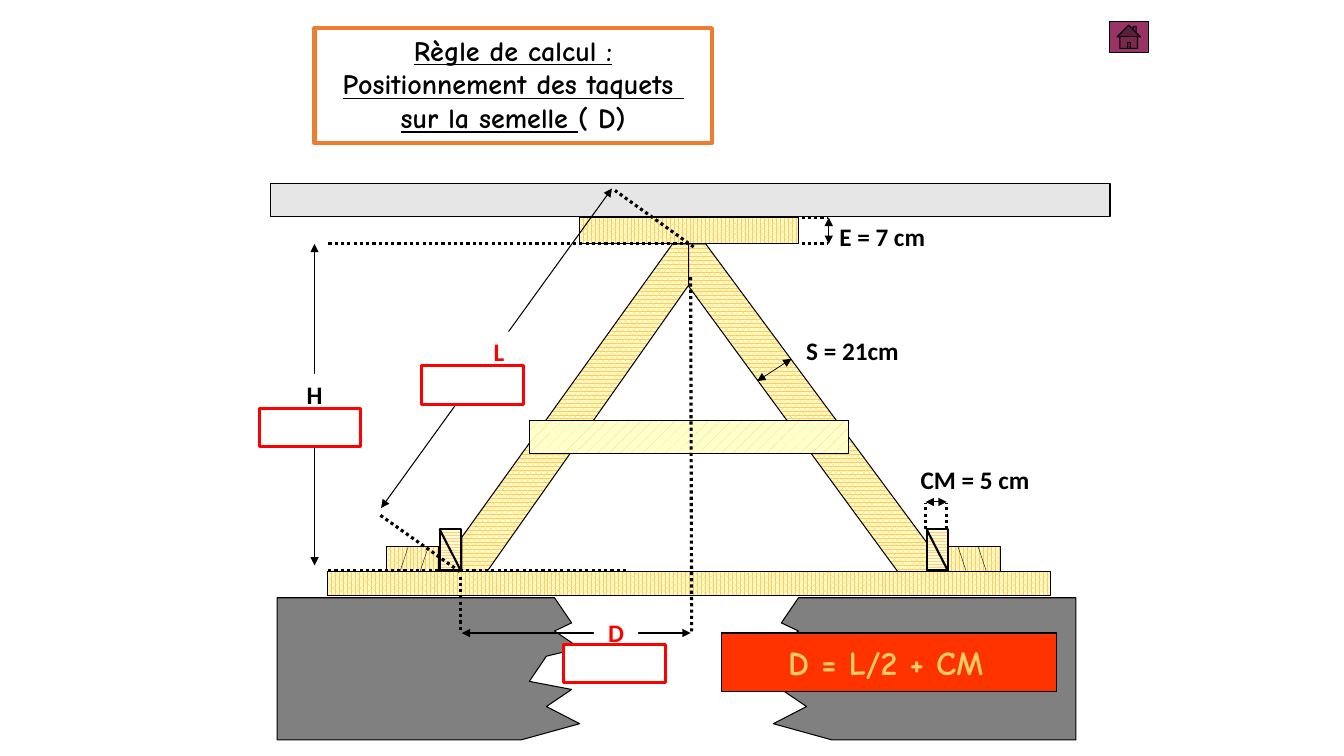
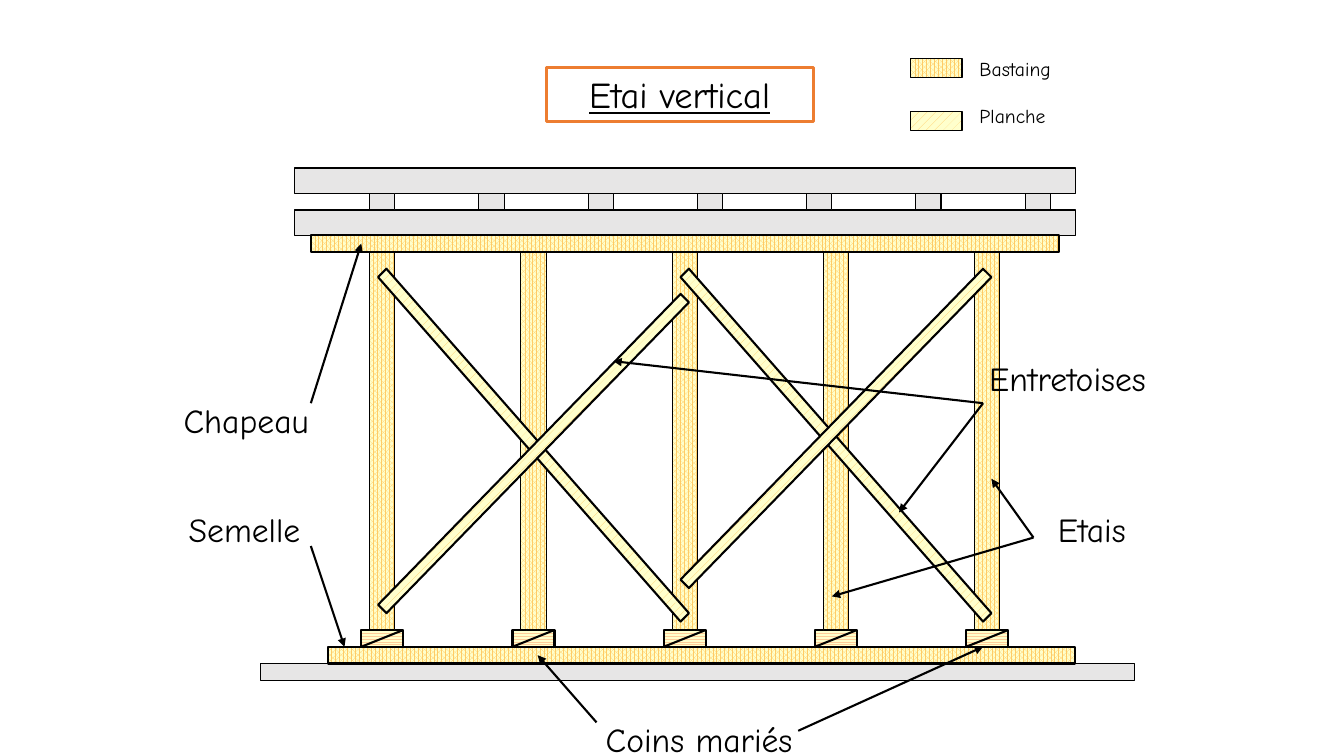
"""Build two slides on timber shoring: the cleat rule and the vertical shore."""
import pptx
import pptx.util
import pptx.dml.color
import pptx.enum.dml
import pptx.enum.shapes
import pptx.enum.text
import pptx.oxml.ns
from lxml import etree

RGB = pptx.dml.color.RGBColor
PATTERN = pptx.enum.dml.MSO_PATTERN
SHAPE = pptx.enum.shapes.MSO_SHAPE
ALIGN = pptx.enum.text.PP_ALIGN
Pt = pptx.util.Pt

BLACK = RGB(0x00, 0x00, 0x00)
WHITE = RGB(0xFF, 0xFF, 0xFF)
RED = RGB(0xFF, 0x00, 0x00)
ORANGE = RGB(0xED, 0x7D, 0x31)
VERMILION = RGB(0xFF, 0x33, 0x00)
PLUM = RGB(0x99, 0x33, 0x66)
CONCRETE = RGB(0xE7, 0xE6, 0xE6)
ROCK = RGB(0x80, 0x80, 0x80)
GRAIN = RGB(0xFF, 0xCC, 0x66)
PEACH = RGB(0xFF, 0xCC, 0x99)
CREAM = RGB(0xFF, 0xFF, 0xCC)

BEAM = (PATTERN.PERCENT_75, GRAIN, CREAM)
PLANK = (PATTERN.PERCENT_20, GRAIN, CREAM)
TIE = (PATTERN.PERCENT_10, GRAIN, CREAM)
WEDGE = (PATTERN.ZIG_ZAG, PEACH, CREAM)

DIMENSION = {"name": "Calibri", "size": Pt(18), "bold": True}
FORMULA = {"name": "Comic Neue", "size": Pt(24), "bold": True}
CAPTION = {"name": "Comic Neue", "size": Pt(24)}
LEGEND = {"name": "Comic Neue", "size": Pt(14)}
RULE_TITLE = {"name": "Comic Neue", "size": Pt(20), "bold": True, "underline": True}
SHORE_TITLE = {"name": "Comic Neue", "size": Pt(26), "underline": True}
PLAIN = {"underline": False}

RULE = {
    "title": [[("Règle de calcul :", {})],
              [("Positionnement des taquets ", {})],
              [("sur la semelle ", {}), ("( D)", PLAIN)]],
    "blocks": [((9.4, 5.42, 0.52, 0.25), (9.61, 9.81), -0.11),
               ((3.83, 5.42, 0.52, 0.25), (3.94, 4.14), 0.11)],
    "struts": [[(4.58, 5.33), (6.67, 2.42), (6.83, 2.42), (6.83, 2.83), (4.83, 5.67), (4.58, 5.67)],
               [(9.19, 5.38), (7, 2.42), (6.83, 2.42), (6.83, 2.84), (8.94, 5.72), (9.19, 5.72)]],
    "bank": [(2.75, 5.93), (5.5, 5.93), (5.67, 6.18), (5.5, 6.26), (5.75, 6.43), (5.42, 6.51),
             (5.25, 6.76), (5.67, 6.84), (5.42, 7.01), (5.75, 7.18), (5.17, 7.34), (2.75, 7.34)],
    "bank_mirror": 13.42,
    "cleats": [9.19, 4.36],
    "spans": [((6.85, 6.28), (4.58, 6.28), 0.75), ((3.12, 5.61), (3.12, 2.42), 0.75),
              ((3.78, 5.04), (6.07, 1.87), 0.75), ((9.18, 4.98), (9.39, 4.98), 0.75),
              ((8.22, 2.16), (8.22, 2.42), 0.75), ((7.85, 3.56), (7.51, 3.78), 0.5)],
    "guides": [((4.57, 5.72), (4.57, 6.25)), ((6.85, 2.75), (6.86, 6.28)),
               ((6.21, 5.66), (3.23, 5.66)), ((6.88, 2.45), (6.1, 1.89)),
               ((4.56, 5.67), (3.77, 5.11)), ((9.39, 5.25), (9.39, 4.99)),
               ((9.18, 5.25), (9.18, 4.99)), ((7.95, 2.42), (8.21, 2.42)),
               ((7.95, 2.16), (8.21, 2.16))],
    "unknowns": [("D", (5.89, 6.08, 0.44, 0.4), RED, (5.59, 6.39)),
                 ("H", (2.75, 3.71, 0.74, 0.4), BLACK, (2.57, 4.05)),
                 ("L", (4.66, 3.29, 0.58, 0.4), RED, (4.18, 3.63))],
    "answer_size": (1.01, 0.38),
    "known": [("CM = 5 cm", (8.93, 4.56, 1.48, 0.4)), ("E = 7 cm", (8.11, 2.15, 1.28, 0.4)),
              ("S = 21cm", (7.89, 3.28, 1.13, 0.4))],
}

SHORE = {
    "title": [[("Etai vertical", {})]],
    "slabs": [(35, 25, 93, 3), (35, 20, 93, 3), (31, 79, 104, 2)],
    "joists": [(44 + 13 * n, 23, 3, 2) for n in range(7)],
    "beams": [(37, 28, 89, 2), (39, 77, 89, 2)],
    "wedges": [(43 + 18 * n, 75, 5, 2) for n in range(5)],
    "posts": [(44 + 18 * n, 30, 3, 45) for n in range(5)],
    "falling": [(46, 32), (82, 73), (81, 74), (45, 33)],
    "rising": [(81, 35), (45, 72), (46, 73), (82, 36)],
    "braces": [("falling", 36, 0), ("falling", 0, 0), ("rising", 0, 0), ("rising", 36, -3)],
    "captions": [
        ("Chapeau", (20.5, 47, 17.6, 6), [((37, 48), (43, 29))]),
        ("Semelle", (20.6, 60, 17, 6), [((37, 65), (41, 77))]),
        ("Coins mariés", (70.4, 85, 25.6, 6), [((95, 87), (117, 77)), ((71, 86), (64, 78))]),
        ("Etais", (124, 60, 11.9, 6), [((123, 64), (99, 71)), ((123, 64), (118, 57))]),
        ("Entretoises", (115, 42, 24.1, 6), [((117, 48), (73, 43)), ((117, 48), (107, 61))]),
    ],
    "legend": [("Bastaing", BEAM, 7), ("Planche", PLANK, 13.3)],
}


class Board:
    """A slide measured in cells, with a fixed number of cells to the inch."""

    def __init__(self, deck, cells_per_inch):
        self.shapes = deck.slides.add_slide(deck.slide_layouts[6]).shapes
        self.cells = cells_per_inch

    def lengths(self, values):
        return [pptx.util.Inches(value / self.cells) for value in values]

    def dress(self, part, fill, line, width):
        part.shadow.inherit = False
        if fill is None:
            part.fill.background()
        elif isinstance(fill, RGB):
            part.fill.solid()
            part.fill.fore_color.rgb = fill
        else:
            part.fill.patterned()
            part.fill.pattern, part.fill.fore_color.rgb, part.fill.back_color.rgb = fill
        if line is None:
            part.line.fill.background()
        else:
            part.line.color.rgb = line
            part.line.width = Pt(width)
        return part

    def block(self, box, fill, line=BLACK, width=0.75, kind=SHAPE.RECTANGLE):
        part = self.shapes.add_shape(kind, *self.lengths(box))
        return self.dress(part, fill, line, width)

    def outline(self, points, fill, width=0.75):
        corners = [self.lengths(point) for point in points]
        builder = self.shapes.build_freeform(*corners[0], scale=1.0)
        builder.add_line_segments(corners[1:], close=True)
        return self.dress(builder.convert_to_shape(), fill, BLACK, width)

    def line(self, start, end, width=0.75, dotted=False, heads=()):
        straight = pptx.enum.shapes.MSO_CONNECTOR.STRAIGHT
        part = self.shapes.add_connector(straight, *self.lengths(start + end))
        part.line.color.rgb = BLACK
        part.line.width = Pt(width)
        if dotted:
            part.line.dash_style = pptx.enum.dml.MSO_LINE.ROUND_DOT
        qn = pptx.oxml.ns.qn
        outline = part.line._get_or_add_ln()
        for head in heads:
            etree.SubElement(outline, qn(f"a:{head}")).set("type", "triangle")
        etree.SubElement(part._element.spPr, qn("a:effectLst"))
        return part

    def inscribe(self, part, paragraphs, look, color=BLACK, wrap=True, align=ALIGN.CENTER, gap=0):
        frame = part.text_frame
        settings = {"word_wrap": wrap, "vertical_anchor": pptx.enum.text.MSO_ANCHOR.TOP,
                    "auto_size": pptx.enum.text.MSO_AUTO_SIZE.SHAPE_TO_FIT_TEXT}
        for name, value in settings.items():
            setattr(frame, name, value)
        for index, pieces in enumerate(paragraphs):
            paragraph = frame.add_paragraph() if index else frame.paragraphs[0]
            paragraph.alignment = align
            if index and gap:
                paragraph.space_before = Pt(gap)
            for words, changes in pieces:
                run = paragraph.add_run()
                run.text = words
                run.font.color.rgb = color
                for name, value in {**look, **changes}.items():
                    setattr(run.font, name, value)

    def label(self, box, lines, look, **options):
        part = self.shapes.add_textbox(*self.lengths(box))
        self.inscribe(part, [[(words, {})] for words in lines], look, **options)

    def title(self, box, paragraphs, look, width):
        self.inscribe(self.block(box, None, ORANGE, width), paragraphs, look)

    def wedge(self, box, falling=False):
        left, top, wide, high = box
        self.block(box, WEDGE, width=1.5)
        near, far = (top, top + high) if falling else (top + high, top)
        self.line((left + wide, far), (left, near), 1.5)


def draw_rule(deck):
    """Draw the slide on where the cleats go."""
    board = Board(deck, 1)
    both = ("headEnd", "tailEnd")
    for box, nails, lean in RULE["blocks"]:
        board.block(box, BEAM)
        for foot in nails:
            board.line((foot, 5.75), (foot + lean, 5.42), 0.25)
    board.block((2.68, 1.82, 8.33, 0.33), CONCRETE)
    for strut in RULE["struts"]:
        board.outline(strut, BEAM)
    board.block((5.25, 4.17, 3.17, 0.33), TIE)
    cap = board.block((5.75, 2.16, 2.17, 0.26), BEAM)
    board.outline(RULE["bank"], ROCK)
    board.outline([(RULE["bank_mirror"] - x, y) for x, y in RULE["bank"]], ROCK)
    board.block((3.25, 5.67, 7.17, 0.24), BEAM)
    for left in RULE["cleats"]:
        board.wedge((left, 5.25, 0.21, 0.41), falling=True)
    for start, end, width in RULE["spans"]:
        board.line(start, end, width, heads=both)
    for start, end in RULE["guides"]:
        board.line(start, end, 2.25, dotted=True)
    top_guide = board.line((6.83, 2.42), (3.23, 2.42), 2.25, dotted=True)
    top_guide.begin_connect(cap, 2)
    for letter, box, color, corner in RULE["unknowns"]:
        board.inscribe(board.block(box, WHITE, None), [[(letter, {})]], DIMENSION, color)
        board.block(corner + RULE["answer_size"], WHITE, RED, 2.25)
    for words, box in RULE["known"]:
        board.label(box, [words], DIMENSION, wrap=False)
    board.block((7.16, 6.28, 3.32, 0.58), VERMILION)
    board.label((7.52, 6.32, 2.65, 0.51), ["D = L/2 + CM "], FORMULA, color=GRAIN, wrap=False)
    board.block((11, 0.21, 0.39, 0.31), PLUM, kind=SHAPE.ACTION_BUTTON_HOME)
    board.title((3.12, 0.28, 3.94, 1.14), RULE["title"], RULE_TITLE, 3)


def draw_shore(deck):
    """Draw the slide that names the parts of a vertical shore."""
    board = Board(deck, 12)
    board.title((65, 8, 31.8, 6.5), SHORE["title"], SHORE_TITLE, 2.25)
    for box in SHORE["slabs"] + SHORE["joists"]:
        board.block(box, CONCRETE)
    for box in SHORE["beams"]:
        board.block(box, BEAM, width=1.5)
    for box in SHORE["wedges"]:
        board.wedge(box)
    for box in SHORE["posts"]:
        board.block(box, BEAM)
    for slope, across, down in SHORE["braces"]:
        board.outline([(x + across, y + down) for x, y in SHORE[slope]], PLANK, 1.5)
    for words, box, arrows in SHORE["captions"]:
        board.label(box, [words], CAPTION, wrap=False)
        for start, end in arrows:
            board.line(start, end, 1.5, heads=("tailEnd",))
    for _, timber, top in SHORE["legend"]:
        board.block((108.4, top, 6.1, 2.2), timber)
    board.label((115.4, 6.2, 11.8, 9.7), [entry[0] for entry in SHORE["legend"]], LEGEND,
                wrap=False, align=ALIGN.LEFT, gap=16.6)


def main():
    """Build and save the deck."""
    deck = pptx.Presentation()
    deck.slide_width = pptx.util.Inches(13.33)
    deck.slide_height = pptx.util.Inches(7.5)
    draw_rule(deck)
    draw_shore(deck)
    deck.save("out.pptx")


if __name__ == "__main__":
    main()
